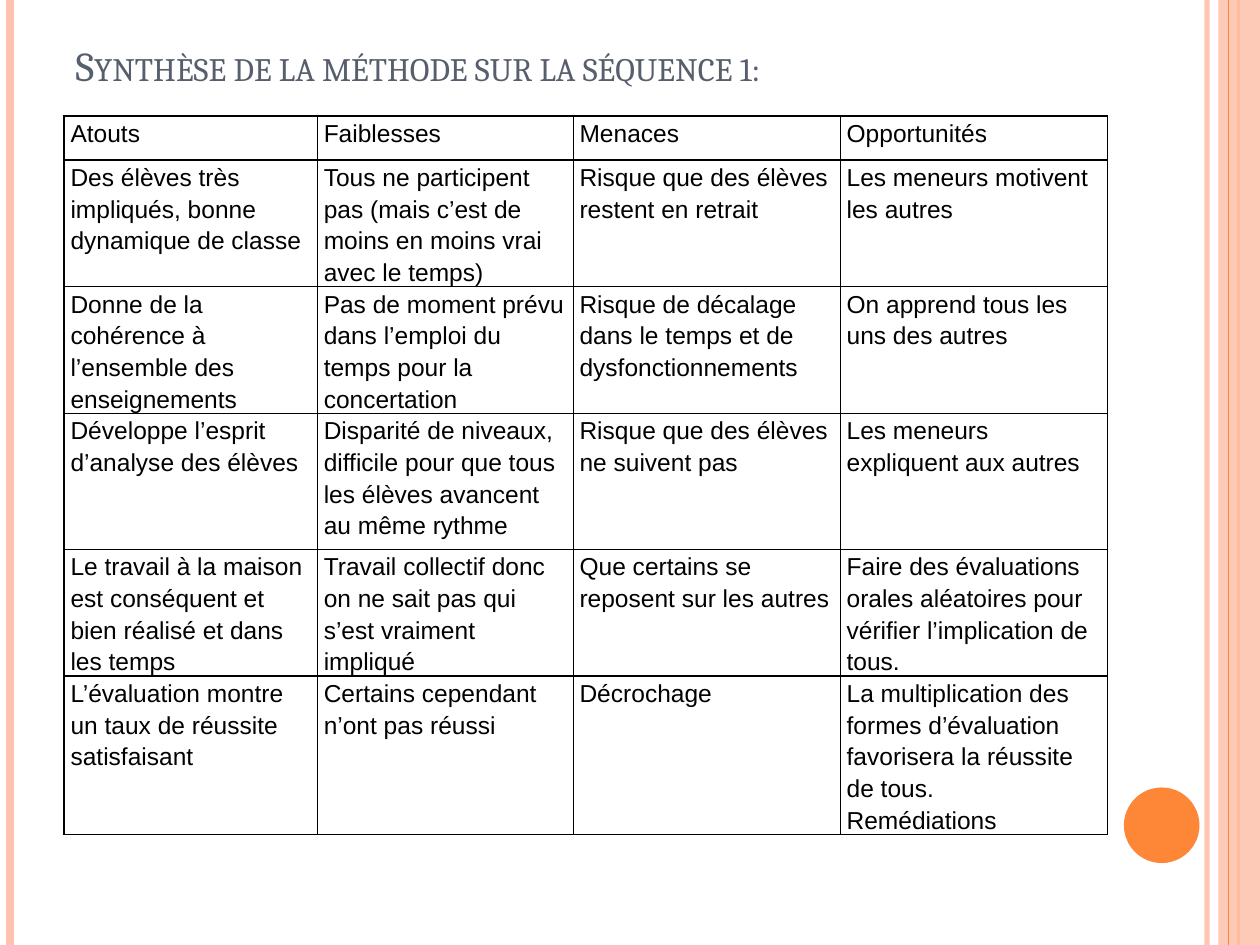
from lxml.etree import SubElement
from pptx import Presentation
from pptx.dml.color import RGBColor
from pptx.enum.shapes import MSO_CONNECTOR as Connector, MSO_SHAPE as Preset
from pptx.enum.text import MSO_ANCHOR as Anchor, PP_ALIGN as Align
from pptx.oxml.ns import qn
from pptx.util import Inches, Pt

PEACH, ORANGE, SLATE, BLACK = "FEC3AE", "FE8637", "575F6D", "000000"
PAGE_WIDTH, PAGE_HEIGHT = 10, 7.5
COLUMN_WIDTHS = [2.01, 2.03, 2.12, 2.12]
ROW_HEIGHTS = [0.35, 0.81, 0.81, 1.08, 0.81, 1.08]
SWOT_ROWS = [
    ["Atouts", "Faiblesses", "Menaces", "Opportunités"],
    ["Des élèves très impliqués, bonne dynamique de classe",
     "Tous ne participent pas (mais c’est de moins en moins vrai avec le temps)",
     "Risque que des élèves restent en retrait",
     "Les meneurs motivent les autres"],
    ["Donne de la cohérence à l’ensemble des enseignements",
     "Pas de moment prévu dans l’emploi du temps pour la concertation",
     "Risque de décalage dans le temps et de dysfonctionnements",
     "On apprend tous les uns des autres"],
    ["Développe l’esprit d’analyse des élèves",
     "Disparité de niveaux, difficile pour que tous les élèves avancent au même rythme",
     "Risque que des élèves ne suivent pas",
     "Les meneurs expliquent aux autres"],
    ["Le travail à la maison est conséquent et bien réalisé et dans les temps",
     "Travail collectif donc on ne sait pas qui s’est vraiment impliqué",
     "Que certains se reposent sur les autres",
     "Faire des évaluations orales aléatoires pour vérifier l’implication de tous."],
    ["L’évaluation montre un taux de réussite satisfaisant",
     "Certains cependant n’ont pas réussi",
     "Décrochage",
     "La multiplication des formes d’évaluation favorisera la réussite de tous.\nRemédiations"],
]


def color(value):
    return RGBColor.from_string(value)


def set_alpha(fill_parent, percent):
    tint = next(fill_parent.iter(qn("a:srgbClr")))
    SubElement(tint, qn("a:alpha"), val=str(percent * 1000))


class SlideBuilder:
    """Holds the style and the current slide, and draws each kind of element."""

    title_font, body_font = "Cambria", "Arial"
    title_size, body_size = Pt(23.4), Pt(14)
    line_spacing = 1.15

    def __init__(self, deck):
        self.page = deck.slides.add_slide(deck.slide_layouts[5])

    def style(self, paragraph, name, size, hue):
        paragraph.font.name = name
        paragraph.font.size = size
        paragraph.font.color.rgb = color(hue)

    def rule(self, left, hue, width, opacity=100):
        line = self.page.shapes.add_connector(
            Connector.STRAIGHT, Inches(left), 0, Inches(left), Inches(PAGE_HEIGHT))
        line.line.color.rgb = color(hue)
        line.line.width = Pt(width)
        properties = line._element.spPr
        SubElement(properties, qn("a:effectLst"))
        if opacity < 100:
            set_alpha(properties, opacity)

    def shape(self, preset, left, top, width, height, hue, opacity=100):
        shape = self.page.shapes.add_shape(
            preset, Inches(left), Inches(top), Inches(width), Inches(height))
        shape.shadow.inherit = False
        shape.fill.solid()
        shape.fill.fore_color.rgb = color(hue)
        shape.line.fill.background()
        if opacity < 100:
            set_alpha(shape._element.spPr, opacity)

    def title(self, text, left, top, width, height):
        box = self.page.shapes.title
        box.left, box.top = Inches(left), Inches(top)
        box.width, box.height = Inches(width), Inches(height)
        frame = box.text_frame
        frame.text = text
        frame.word_wrap = True
        frame.vertical_anchor = Anchor.BOTTOM
        para = frame.paragraphs[0]
        para.alignment = Align.LEFT
        self.style(para, self.title_font, self.title_size, SLATE)
        para.runs[0].font._element.set("cap", "small")

    def cell(self, cell, text):
        cell.margin_left = cell.margin_right = Inches(0.05)
        cell.margin_top = cell.margin_bottom = 0
        cell.text = text
        for para in cell.text_frame.paragraphs:
            para.line_spacing = self.line_spacing
            self.style(para, self.body_font, self.body_size, BLACK)
        properties = cell._tc.get_or_add_tcPr()
        for side in ("lnL", "lnR", "lnT", "lnB"):
            border = SubElement(properties, qn(f"a:{side}"), w=str(Pt(1)))
            SubElement(SubElement(border, qn("a:solidFill")), qn("a:srgbClr"), val=BLACK)
        cell.fill.background()

    def table(self, rows, left, top, widths, heights):
        table = self.page.shapes.add_table(
            len(rows), len(widths), Inches(left), Inches(top),
            Inches(sum(widths)), Inches(sum(heights))).table
        table.first_row = table.horz_banding = False
        for column, width in zip(table.columns, widths):
            column.width = Inches(width)
        for row, height, texts in zip(table.rows, heights, rows):
            row.height = Inches(height)
            for cell, text in zip(row.cells, texts):
                self.cell(cell, text)


def main():
    deck = Presentation()
    deck.slide_width, deck.slide_height = Inches(PAGE_WIDTH), Inches(PAGE_HEIGHT)
    slide = SlideBuilder(deck)
    slide.rule(9.58, PEACH, 3, opacity=93)
    slide.rule(0.08, PEACH, 4.5)
    slide.rule(9.83, ORANGE, 1.5)
    slide.shape(Preset.RECTANGLE, 9.67, 0, 0.33, PAGE_HEIGHT, PEACH, opacity=87)
    slide.rule(9.75, ORANGE, 0.75)
    slide.shape(Preset.OVAL, 8.92, 6.25, 0.6, 0.6, ORANGE)
    slide.title("Synthèse de la méthode sur la séquence 1:", 0.5, 0.3, 8.17, 0.46)
    slide.table(SWOT_ROWS, 0.51, 0.92, COLUMN_WIDTHS, ROW_HEIGHTS)
    deck.save("out.pptx")


if __name__ == "__main__":
    main()
